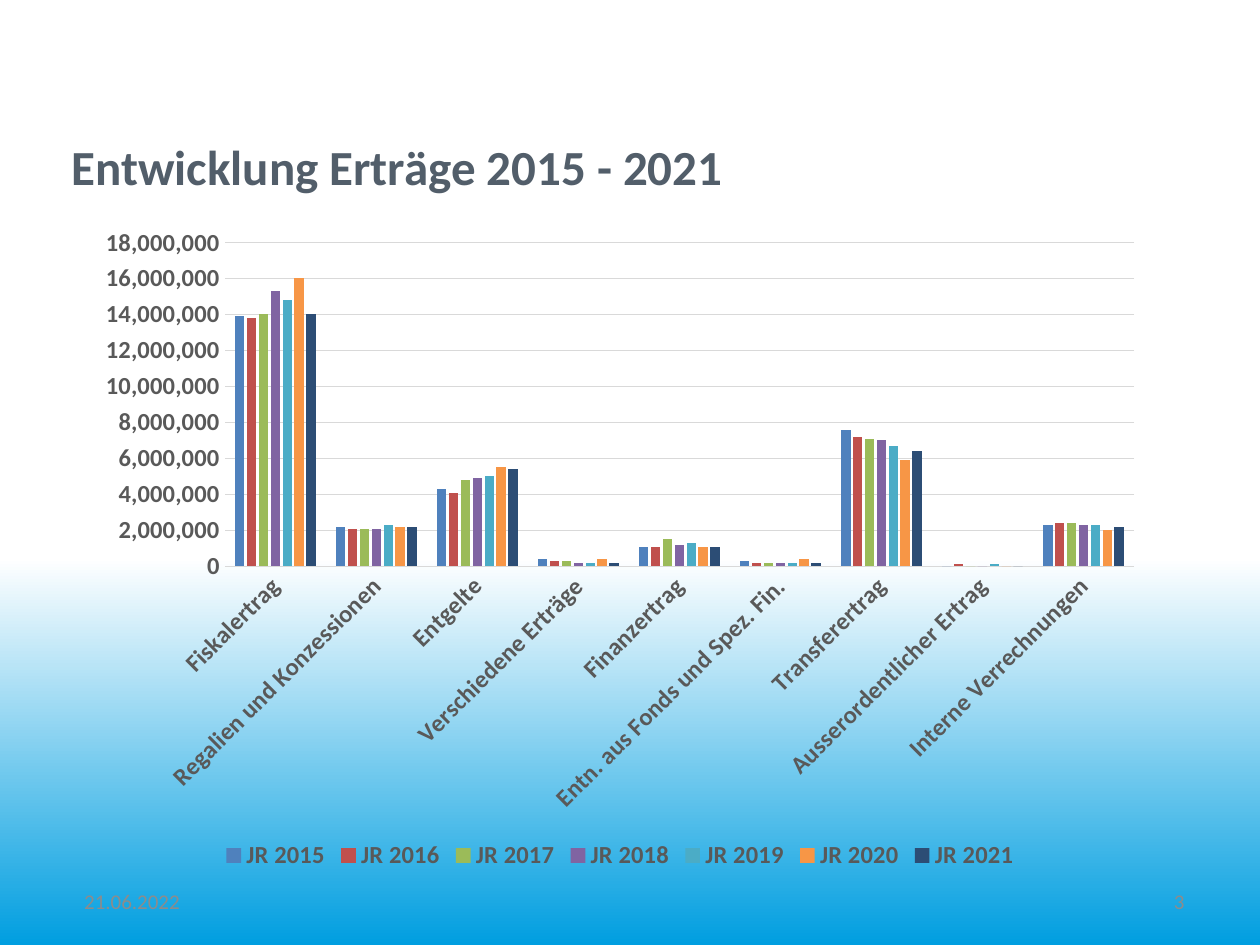
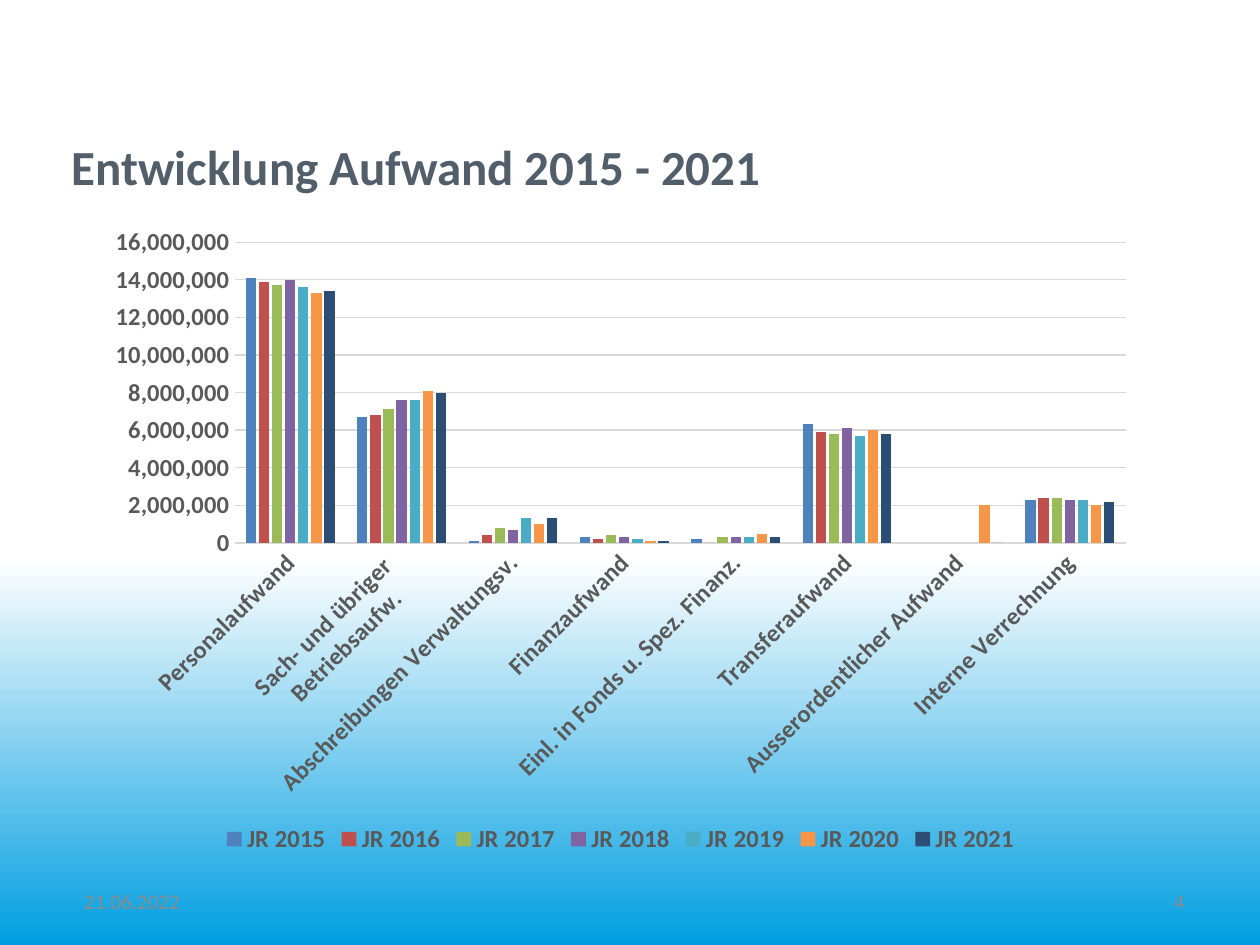
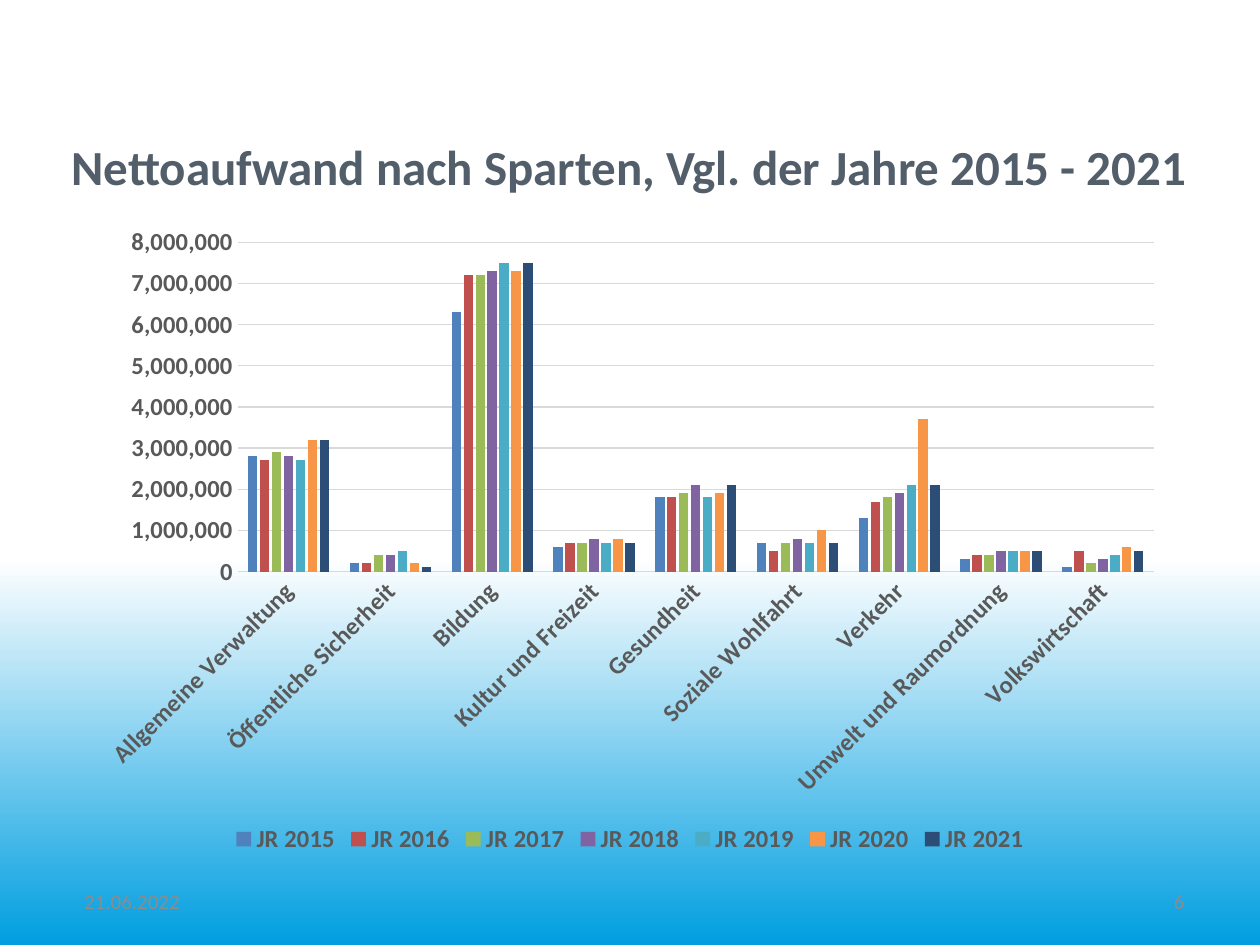
from pptx import Presentation
from pptx import util as u
from pptx.chart.data import CategoryChartData
from pptx.dml.color import RGBColor
from pptx.enum import chart as charts, text

FONT = "Calibri"
COLORS = {
    "sky": "FFFFFF", "water": "009EE0", "title": "525E6A", "footer": "8C8C8C",
    "labels": "595959", "grid": "D9D9D9",
}
YEAR_COLORS = {
    2015: "4F81BD", 2016: "C0504D", 2017: "9BBB59", 2018: "8064A2",
    2019: "4BACC6", 2020: "F79646", 2021: "2C4D75",
}
TITLE_BOX = (0.57, 1.08, 8.96, 0.62)
DATE_BOX = (0.57, 6.95, 2.33, 0.4)
PAGE_BOX = (7.17, 6.95, 2.33, 0.4)
DATE = "21.06.2022"

# Amounts in millions, one per year from 2015 to 2021
INCOME = {
    "Fiskalertrag": (13.9, 13.8, 14, 15.3, 14.8, 16, 14),
    "Regalien und Konzessionen": (2.2, 2.1, 2.1, 2.1, 2.3, 2.2, 2.2),
    "Entgelte": (4.3, 4.1, 4.8, 4.9, 5, 5.5, 5.4),
    "Verschiedene Erträge": (0.4, 0.3, 0.3, 0.2, 0.2, 0.4, 0.2),
    "Finanzertrag": (1.1, 1.1, 1.5, 1.2, 1.3, 1.1, 1.1),
    "Entn. aus Fonds und Spez. Fin.": (0.3, 0.2, 0.2, 0.2, 0.2, 0.4, 0.2),
    "Transferertrag": (7.6, 7.2, 7.1, 7, 6.7, 5.9, 6.4),
    "Ausserordentlicher Ertrag": (0, 0.1, 0, 0, 0.1, 0, 0),
    "Interne Verrechnungen": (2.3, 2.4, 2.4, 2.3, 2.3, 2, 2.2),
}
EXPENSES = {
    "Personalaufwand": (14.1, 13.9, 13.7, 14, 13.6, 13.3, 13.4),
    "Sach- und übriger \nBetriebsaufw.": (6.7, 6.8, 7.1, 7.6, 7.6, 8.1, 8),
    "Abschreibungen Verwaltungsv.": (0.1, 0.4, 0.8, 0.7, 1.3, 1, 1.3),
    "Finanzaufwand": (0.3, 0.2, 0.4, 0.3, 0.2, 0.1, 0.1),
    "Einl. in Fonds u. Spez. Finanz.": (0.2, 0, 0.3, 0.3, 0.3, 0.5, 0.3),
    "Transferaufwand": (6.3, 5.9, 5.8, 6.1, 5.7, 6, 5.8),
    "Ausserordentlicher Aufwand": (None, None, None, None, None, 2, 0),
    "Interne Verrechnung": (2.3, 2.4, 2.4, 2.3, 2.3, 2, 2.2),
}
NET_EXPENSES = {
    "Allgemeine Verwaltung": (2.8, 2.7, 2.9, 2.8, 2.7, 3.2, 3.2),
    "Öffentliche Sicherheit": (0.2, 0.2, 0.4, 0.4, 0.5, 0.2, 0.1),
    "Bildung": (6.3, 7.2, 7.2, 7.3, 7.5, 7.3, 7.5),
    "Kultur und Freizeit": (0.6, 0.7, 0.7, 0.8, 0.7, 0.8, 0.7),
    "Gesundheit": (1.8, 1.8, 1.9, 2.1, 1.8, 1.9, 2.1),
    "Soziale Wohlfahrt": (0.7, 0.5, 0.7, 0.8, 0.7, 1, 0.7),
    "Verkehr": (1.3, 1.7, 1.8, 1.9, 2.1, 3.7, 2.1),
    "Umwelt und Raumordnung": (0.3, 0.4, 0.4, 0.5, 0.5, 0.5, 0.5),
    "Volkswirtschaft": (0.1, 0.5, 0.2, 0.3, 0.4, 0.6, 0.5),
}
SLIDES = [
    ("Entwicklung Erträge 2015 - 2021", 3, INCOME, (0.67, 1.7, 8.5, 5.25)),
    ("Entwicklung Aufwand 2015 - 2021", 4, EXPENSES, (0.75, 1.7, 8.35, 5.12)),
    ("Nettoaufwand nach Sparten, Vgl. der Jahre 2015 - 2021", 6, NET_EXPENSES,
     (0.67, 1.7, 8.66, 5.12)),
]


def rgb(name):
    return RGBColor.from_string(COLORS[name])


def inches(box):
    return [u.Inches(length) for length in box]


def style_font(font, size, color, bold=False):
    font.name, font.size, font.bold = FONT, u.Pt(size), bold
    font.color.rgb = rgb(color)


def paint_background(slide):
    fill = slide.background.fill
    fill.gradient()
    fill.gradient_angle = 270
    for stop, position, color in zip(fill.gradient_stops, (0.59, 1), ("sky", "water")):
        stop.position = position
        stop.color.rgb = rgb(color)


def add_text(slide, box, wording, size, color, bold=False, align=text.PP_ALIGN.LEFT):
    frame = slide.shapes.add_textbox(*inches(box)).text_frame
    frame.word_wrap = True
    line = frame.paragraphs[0]
    line.text, line.alignment = wording, align
    style_font(line.font, size, color, bold)
    return frame


def add_title(slide, wording):
    frame = add_text(slide, TITLE_BOX, wording, 28, "title", bold=True)
    frame.margin_left = frame.margin_right = frame.margin_top = frame.margin_bottom = 0


def add_footer(slide, page):
    for box, wording, align in ((DATE_BOX, DATE, text.PP_ALIGN.LEFT),
                                (PAGE_BOX, str(page), text.PP_ALIGN.RIGHT)):
        frame = add_text(slide, box, wording, 12, "footer", align=align)
        frame.vertical_anchor = text.MSO_ANCHOR.MIDDLE


def style_axes(chart):
    for axis in (chart.category_axis, chart.value_axis):
        axis.major_tick_mark = axis.minor_tick_mark = charts.XL_TICK_MARK.NONE
        style_font(axis.tick_labels.font, 14, "labels", bold=True)
    amounts = chart.value_axis
    amounts.tick_labels.number_format = "#,##0"
    amounts.tick_labels.number_format_is_linked = False
    amounts.format.line.fill.background()
    amounts.has_major_gridlines = True
    for line in (amounts.major_gridlines.format.line, chart.category_axis.format.line):
        line.color.rgb, line.width = rgb("grid"), u.Pt(0.75)
    label_body = chart.element.xpath(".//c:catAx/c:txPr/a:bodyPr")[0]
    label_body.set("rot", str(-45 * 60000))


def add_yearly_chart(slide, box, accounts):
    """Clustered columns: one group per account, one column per year."""
    data = CategoryChartData(number_format="#,##0")
    data.categories = list(accounts)
    for year, millions in zip(YEAR_COLORS, zip(*accounts.values())):
        data.add_series(f"JR {year}", [None if m is None else round(m * 1_000_000)
                                       for m in millions])
    chart = slide.shapes.add_chart(
        charts.XL_CHART_TYPE.COLUMN_CLUSTERED, *inches(box), data).chart
    chart.has_title = False
    chart.font.name, chart.font.size = FONT, u.Pt(10)
    style_axes(chart)

    columns = chart.plots[0]
    columns.gap_width, columns.overlap, columns.vary_by_categories = 219, -27, False
    for series, color in zip(columns.series, YEAR_COLORS.values()):
        series.format.fill.solid()
        series.format.fill.fore_color.rgb = RGBColor.from_string(color)
        series.invert_if_negative = False

    chart.has_legend = True
    chart.legend.position = charts.XL_LEGEND_POSITION.BOTTOM
    chart.legend.include_in_layout = False
    style_font(chart.legend.font, 14, "labels", bold=True)


def add_chart_slide(deck, title, page, accounts, chart_box):
    slide = deck.slides.add_slide(deck.slide_layouts[6])
    paint_background(slide)
    add_title(slide, title)
    add_footer(slide, page)
    add_yearly_chart(slide, chart_box, accounts)


def main():
    deck = Presentation()
    deck.slide_width, deck.slide_height = u.Inches(10), u.Inches(7.5)
    for content in SLIDES:
        add_chart_slide(deck, *content)
    deck.save("out.pptx")


if __name__ == "__main__":
    main()
